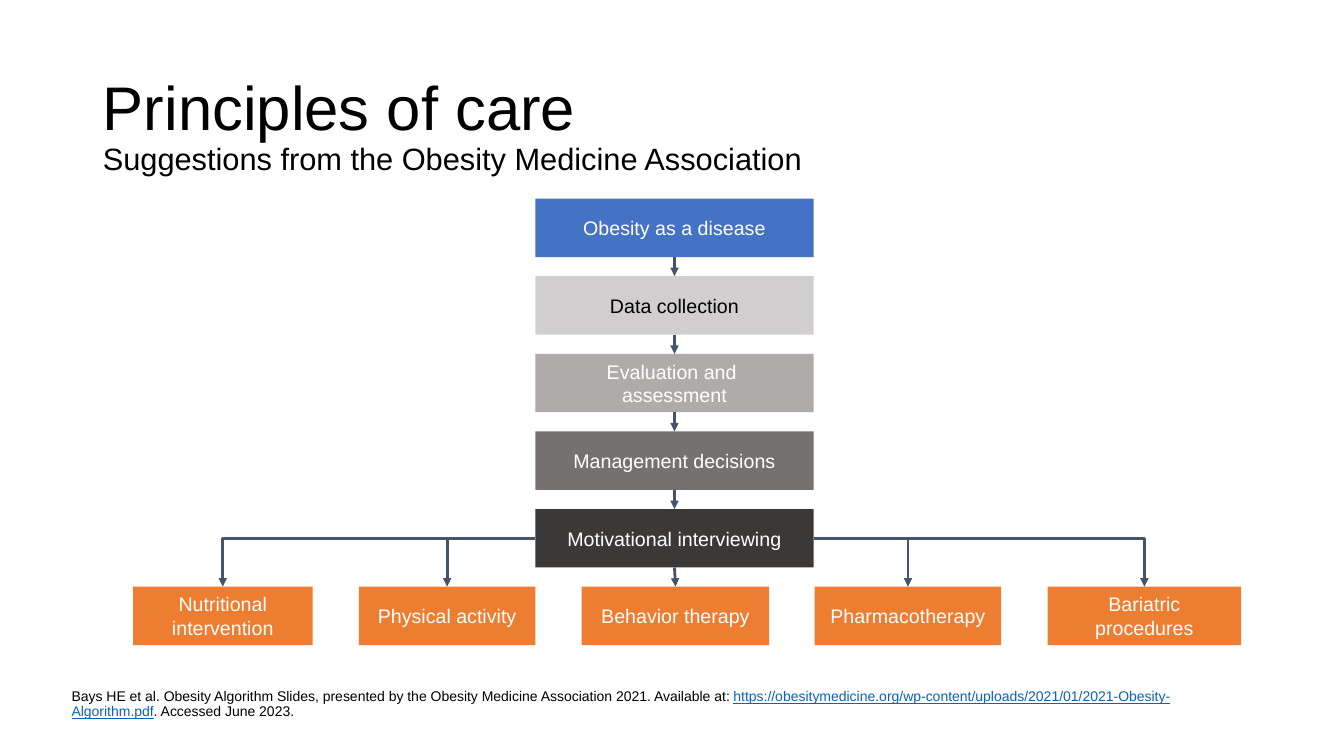
from dataclasses import dataclass

from lxml import etree
from pptx import Presentation
from pptx.dml.color import RGBColor
from pptx.enum.shapes import MSO_CONNECTOR, MSO_SHAPE
from pptx.enum.text import MSO_ANCHOR, MSO_AUTO_SIZE, PP_ALIGN
from pptx.oxml.ns import qn
from pptx.util import Inches, Pt

RECTANGLE = MSO_SHAPE.RECTANGLE
STRAIGHT, ELBOW = MSO_CONNECTOR.STRAIGHT, MSO_CONNECTOR.ELBOW
MIDDLE, BOTTOM = MSO_ANCHOR.MIDDLE, MSO_ANCHOR.BOTTOM
LEFT, CENTER = PP_ALIGN.LEFT, PP_ALIGN.CENTER
NO_AUTOFIT = MSO_AUTO_SIZE.NONE
# Connection sites of a rectangle
SITE_TOP, SITE_LEFT, SITE_BOTTOM, SITE_RIGHT = range(4)


@dataclass(frozen=True)
class Theme:
    font: str = "Arial"
    title_size: int = 44
    subtitle_size: int = 22
    box_size: int = 14
    source_size: int = 10
    line_width: int = 2
    line_spacing: float = 0.9
    black: str = "000000"
    white: str = "FFFFFF"
    link: str = "0563C1"
    arrow: str = "44546A"
    treatment: str = "ED7D31"
    disease: str = "4472C4"
    data: str = "D0CECE"
    evaluation: str = "AFABAB"
    management: str = "767171"
    interviewing: str = "3B3838"


THEME = Theme()

STEP_LEFT, STEP_TOP, STEP_WIDTH = 5.31, 1.97, 2.76
STEP_PITCH, BOX_HEIGHT = 0.77, 0.58
STEPS = [
    ("Obesity as a disease", THEME.disease, THEME.white),
    ("Data collection", THEME.data, THEME.black),
    ("Evaluation and \nassessment", THEME.evaluation, THEME.white),
    ("Management decisions", THEME.management, THEME.white),
    ("Motivational interviewing", THEME.interviewing, THEME.white),
]

TREATMENT_TOP = STEP_TOP + len(STEPS) * STEP_PITCH
# Wording, left, width and the side of the last step its arrow leaves from
TREATMENTS = [
    ("Nutritional intervention", 1.32, 1.78, SITE_LEFT),
    ("Physical activity", 3.56, 1.75, SITE_LEFT),
    ("Behavior therapy", 5.77, 1.86, SITE_BOTTOM),
    ("Pharmacotherapy", 8.08, 1.85, SITE_RIGHT),
    ("Bariatric procedures", 10.39, 1.92, SITE_RIGHT),
]

SOURCE_PARTS = [
    ("Bays HE et al. Obesity Algorithm Slides, presented by the Obesity Medicine "
     "Association 2021. Available at: ", False),
    ("https://obesitymedicine.org/wp-content/uploads/2021/01/2021-Obesity-Algorithm.pdf", True),
    (". Accessed June 2023.", False),
]


class CareSlide:
    def __init__(self, presentation, theme):
        self.theme = theme
        self.slide = presentation.slides.add_slide(presentation.slide_layouts[1])

    def style_run(self, run, size, color):
        run.font.name = self.theme.font
        run.font.size = Pt(size)
        run.font.color.rgb = RGBColor.from_string(color)

    def place(self, placeholder, left, top, width, height, anchor):
        """Move a placeholder and return its prepared text frame."""
        placeholder.left, placeholder.top = Inches(left), Inches(top)
        placeholder.width, placeholder.height = Inches(width), Inches(height)
        frame = placeholder.text_frame
        frame.auto_size = NO_AUTOFIT
        frame.word_wrap = True
        frame.vertical_anchor = anchor
        frame.paragraphs[0].alignment = LEFT
        frame.paragraphs[0].line_spacing = self.theme.line_spacing
        return frame

    def title(self, heading, subtitle):
        frame = self.place(self.slide.shapes.title, 0.92, 0.54, 11.5, 1.45, MIDDLE)
        paragraph = frame.paragraphs[0]
        paragraph.text = f"{heading}\v{subtitle}"
        sizes = (self.theme.title_size, self.theme.subtitle_size)
        for run, size in zip(paragraph.runs, sizes):
            self.style_run(run, size, self.theme.black)

    def source(self, parts):
        frame = self.place(self.slide.placeholders[1], 0.71, 6.79, 11.71, 0.35, BOTTOM)
        frame.margin_left = frame.margin_right = 0
        frame.margin_top = frame.margin_bottom = 0
        paragraph = frame.paragraphs[0]
        paragraph.space_before = Pt(10)
        properties = paragraph._p.get_or_add_pPr()
        properties.set("marL", "0")
        properties.set("indent", "0")
        etree.SubElement(properties, qn("a:buNone"))
        for wording, is_address in parts:
            run = paragraph.add_run()
            run.text = wording
            self.style_run(run, self.theme.source_size,
                           self.theme.link if is_address else self.theme.black)
            run.font.underline = is_address

    def box(self, wording, left, top, width, fill, color):
        box = self.slide.shapes.add_shape(
            RECTANGLE, Inches(left), Inches(top), Inches(width), Inches(BOX_HEIGHT))
        box.shadow.inherit = False
        box.fill.solid()
        box.fill.fore_color.rgb = RGBColor.from_string(fill)
        box.line.fill.background()
        frame = box.text_frame
        frame.text = wording
        frame.word_wrap = True
        frame.vertical_anchor = MIDDLE
        for paragraph in frame.paragraphs:
            paragraph.alignment = CENTER
            for run in paragraph.runs:
                self.style_run(run, self.theme.box_size, color)
        return box

    def arrow(self, upper, lower, site=SITE_BOTTOM):
        """Join a side of the upper box to the top of the lower one."""
        kind = STRAIGHT if site == SITE_BOTTOM else ELBOW
        arrow = self.slide.shapes.add_connector(kind, 0, 0, 0, 0)
        arrow.begin_connect(upper, site)
        arrow.end_connect(lower, SITE_TOP)
        arrow.line.color.rgb = RGBColor.from_string(self.theme.arrow)
        arrow.line.width = Pt(self.theme.line_width)
        properties = arrow._element.spPr
        if kind == ELBOW:
            properties.find(qn("a:prstGeom")).set("prst", "bentConnector2")
        etree.SubElement(properties.find(qn("a:ln")), qn("a:tailEnd"), type="triangle")
        etree.SubElement(properties, qn("a:effectLst"))


def main():
    presentation = Presentation()
    presentation.slide_width, presentation.slide_height = Inches(13.33), Inches(7.5)
    care = CareSlide(presentation, THEME)
    care.title("Principles of care", "Suggestions from the Obesity Medicine Association")
    care.source(SOURCE_PARTS)

    steps = [
        care.box(wording, STEP_LEFT, STEP_TOP + row * STEP_PITCH, STEP_WIDTH, fill, color)
        for row, (wording, fill, color) in enumerate(STEPS)
    ]
    for upper, lower in zip(steps, steps[1:]):
        care.arrow(upper, lower)

    for wording, left, width, site in TREATMENTS:
        treatment = care.box(wording, left, TREATMENT_TOP, width, THEME.treatment, THEME.white)
        care.arrow(steps[-1], treatment, site)

    presentation.save("out.pptx")


if __name__ == "__main__":
    main()
